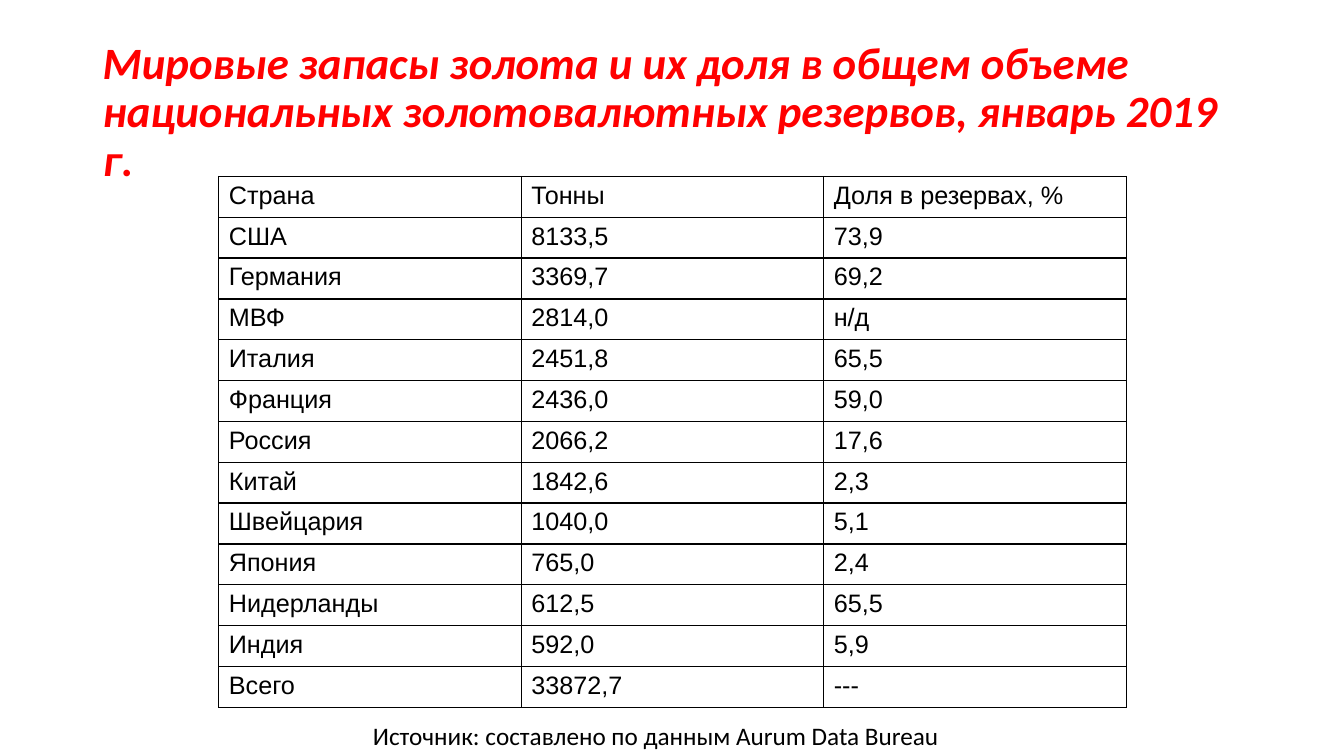
"""Builds a slide with a table of world gold reserves by country."""
from lxml import etree
from pptx import Presentation
from pptx.dml.color import RGBColor
from pptx.enum.text import MSO_ANCHOR
from pptx.oxml.ns import qn
from pptx.util import Inches, Pt

TITLE = ("Мировые запасы золота и их доля в общем объеме "
         "национальных золотовалютных резервов, январь 2019 г.")
RESERVES = [
    ("Страна", "Тонны", "Доля в резервах, %"),
    ("США", "8133,5", "73,9"),
    ("Германия", "3369,7", "69,2"),
    ("МВФ", "2814,0", "н/д"),
    ("Италия", "2451,8", "65,5"),
    ("Франция", "2436,0", "59,0"),
    ("Россия", "2066,2", "17,6"),
    ("Китай", "1842,6", "2,3"),
    ("Швейцария", "1040,0", "5,1"),
    ("Япония", "765,0", "2,4"),
    ("Нидерланды", "612,5", "65,5"),
    ("Индия", "592,0", "5,9"),
    ("Всего", "33872,7", "---"),
]
SOURCE = "Источник: составлено пo данным Aurum Data Bureau"

SLIDE_SIZE = (13.33, 7.5)
TITLE_AREA = (0.92, 0.4, 11.5, 1.45)
TABLE_AREA = (2.17, 1.75, 9, 5.27)
SOURCE_AREA = (3.6, 7.1, 5.83, 0.4)
BORDER_WIDTH = Pt(1)
RED = RGBColor(0xFF, 0x00, 0x00)
BLACK = RGBColor(0x00, 0x00, 0x00)
MIDDLE = MSO_ANCHOR.MIDDLE


def add_span(para, text, font, size, color):
    span = para.add_run()
    span.text = text
    span.font.name = font
    span.font.size = Pt(size)
    span.font.color.rgb = color
    return span


def add_borders(cell):
    properties = cell._tc.get_or_add_tcPr()
    for position, side in enumerate(("lnL", "lnR", "lnT", "lnB")):
        line = etree.Element(qn(f"a:{side}"), w=str(BORDER_WIDTH))
        fill = etree.SubElement(line, qn("a:solidFill"))
        etree.SubElement(fill, qn("a:srgbClr"), val=str(BLACK))
        properties.insert(position, line)


def add_title(page):
    box = page.shapes.add_textbox(*map(Inches, TITLE_AREA))
    frame = box.text_frame
    frame.word_wrap = True
    frame.vertical_anchor = MIDDLE
    para = frame.paragraphs[0]
    para.line_spacing = 0.9
    span = add_span(para, TITLE, "Calibri", 32, RED)
    span.font.bold = span.font.italic = True


def add_reserves(page):
    row_count, column_count = len(RESERVES), len(RESERVES[0])
    area = [Inches(length) for length in TABLE_AREA]
    table = page.shapes.add_table(row_count, column_count, *area).table
    table.first_row = table.horz_banding = False
    for column in table.columns:
        column.width = area[2] // column_count
    for row, values in zip(table.rows, RESERVES):
        row.height = area[3] // row_count
        for cell, value in zip(row.cells, values):
            cell.fill.background()
            add_borders(cell)
            add_span(cell.text_frame.paragraphs[0], value, "Arial", 18, BLACK)


def add_source(page):
    box = page.shapes.add_textbox(*map(Inches, SOURCE_AREA))
    box.text_frame.word_wrap = False
    add_span(box.text_frame.paragraphs[0], SOURCE, "Calibri", 18, BLACK)


def main():
    deck = Presentation()
    deck.slide_width, deck.slide_height = map(Inches, SLIDE_SIZE)
    page = deck.slides.add_slide(deck.slide_layouts[6])
    add_title(page)
    add_reserves(page)
    add_source(page)
    deck.save("out.pptx")


if __name__ == "__main__":
    main()
